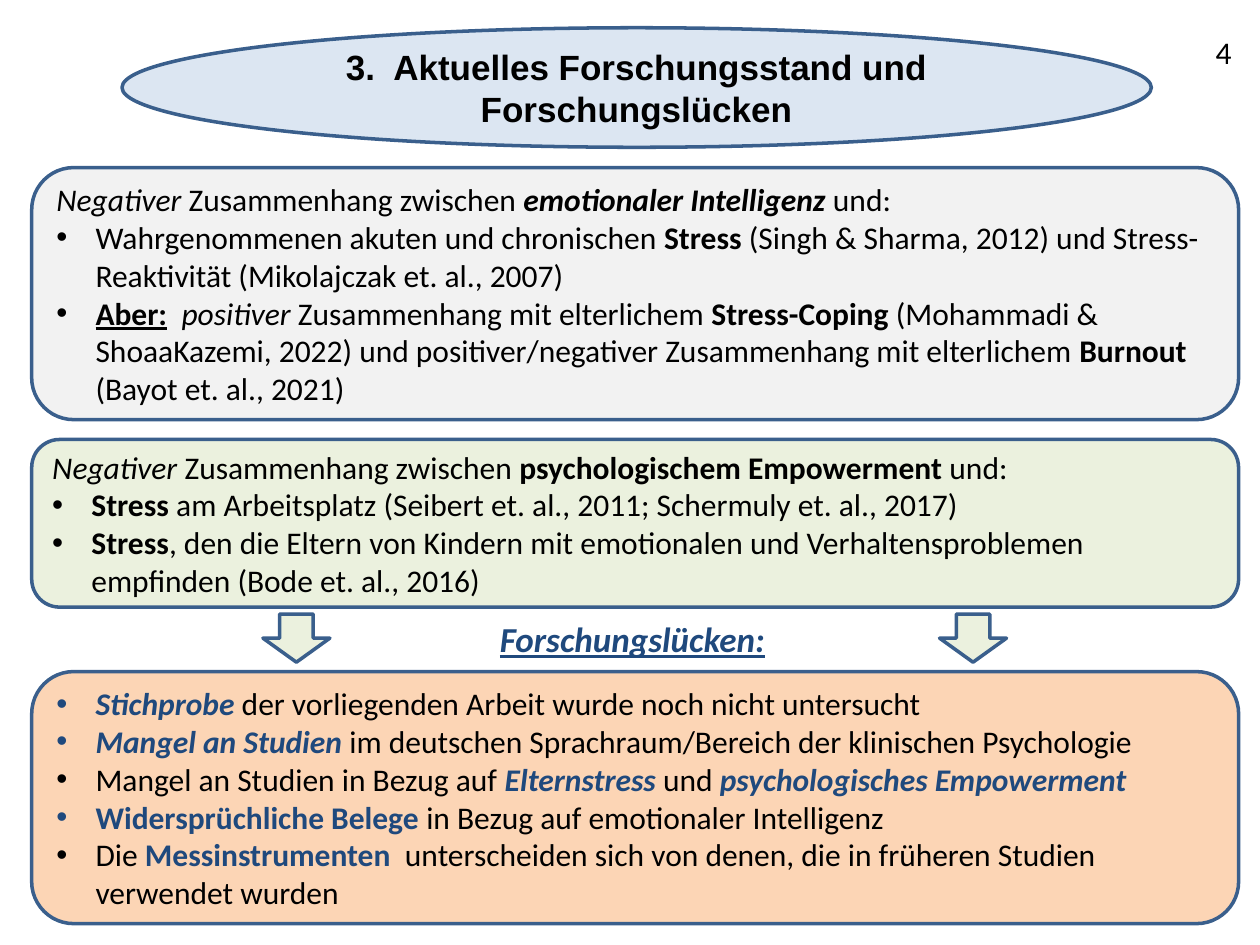
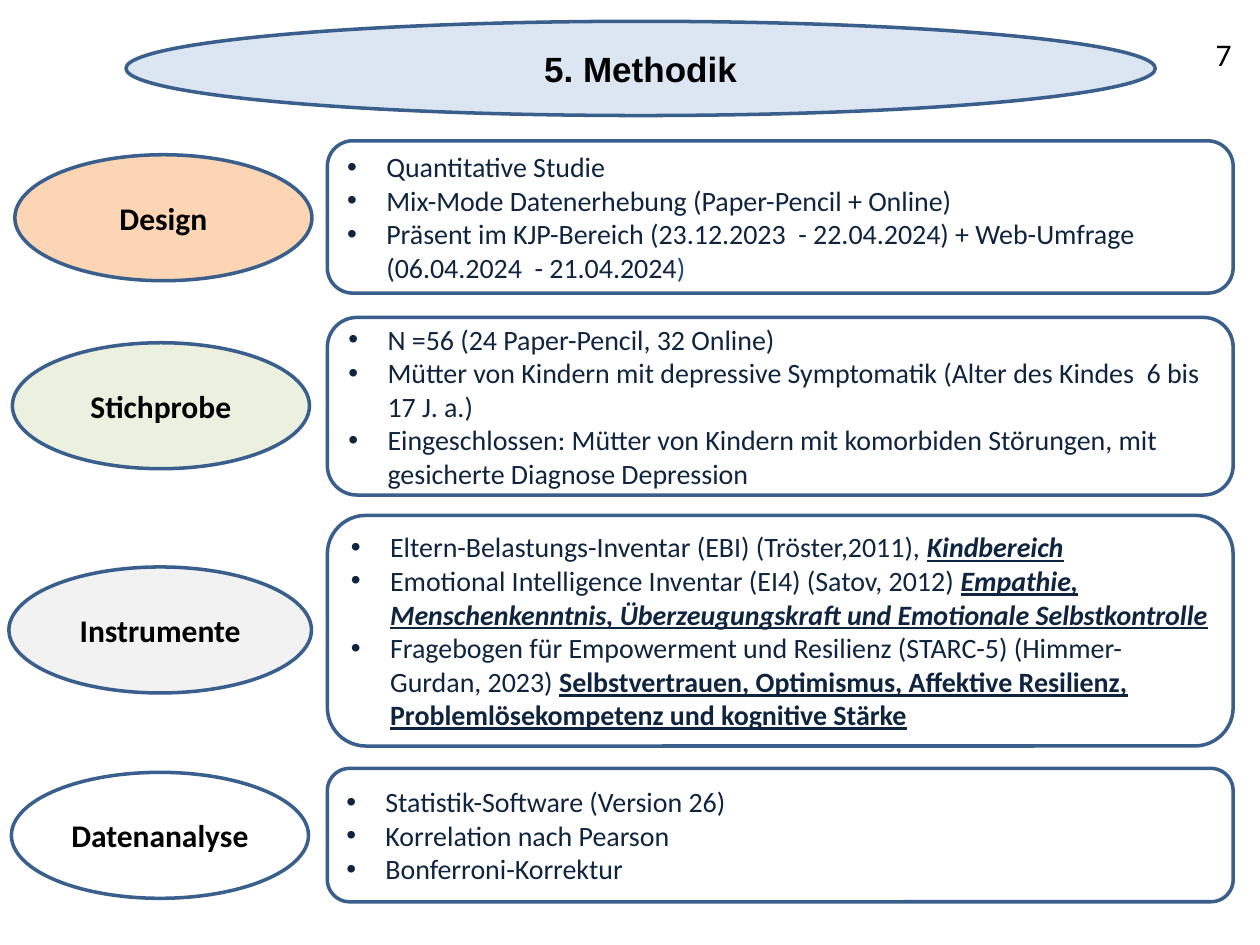
from lxml import etree
from pptx import Presentation
from pptx.dml.color import RGBColor
from pptx.enum.shapes import MSO_SHAPE
from pptx.enum.text import MSO_ANCHOR, PP_ALIGN
from pptx.oxml.ns import qn
from pptx.util import Cm, Pt

ELLIPSE, PANEL, ARROW = MSO_SHAPE.OVAL, MSO_SHAPE.ROUNDED_RECTANGLE, MSO_SHAPE.RIGHT_ARROW
CENTER, LEFT, MIDDLE = PP_ALIGN.CENTER, PP_ALIGN.LEFT, MSO_ANCHOR.MIDDLE

BLACK, NAVY, ACCENT, OUTLINE = "000000", "0F243E", "1F497D", "3A5F8C"
PALE_BLUE, GREY, GREEN, ORANGE, WHITE = "DCE6F2", "F2F2F2", "EBF1DE", "FCD5B5", "FFFFFF"
HEADING_FONT, BODY_FONT = "Arial", "Calibri"
INDENT = Cm(0.79)

# Span marks: b bold, i italic, u underlined, a accent colour
EMOTIONAL_INTRO = [("Negativer ", "i"), ("Zusammenhang zwischen ", ""),
                   ("emotionaler Intelligenz ", "bi"), ("und:", "")]
EMOTIONAL_POINTS = [
    [("Wahrgenommenen akuten und chronischen ", ""), ("Stress", "b"),
     (" (Singh & Sharma, 2012) und Stress-Reaktivität (Mikolajczak et. al., 2007)", "")],
    [("Aber:", "bu"), ("  ", "b"), ("positiver", "i"),
     (" Zusammenhang mit elterlichem ", ""), ("Stress-Coping ", "b"),
     ("(Mohammadi & ShoaaKazemi, 2022) und positiver/negativer Zusammenhang "
      "mit elterlichem ", ""),
     ("Burnout ", "b"), ("(Bayot et. al., 2021)", "")],
]
EMPOWERMENT_INTRO = [("Negativer ", "i"), ("Zusammenhang zwischen ", ""),
                     ("psychologischem Empowerment ", "b"), ("und:", "")]
EMPOWERMENT_POINTS = [
    [("Stress ", "b"),
     ("am Arbeitsplatz (Seibert et. al., 2011; Schermuly et. al., 2017)", "")],
    [("Stress", "b"),
     (", den die Eltern von Kindern mit emotionalen und Verhaltensproblemen "
      "empfinden (Bode et. al., 2016)", "")],
]
GAP_POINTS = [
    [("Stichprobe", "bia"), (" der vorliegenden Arbeit wurde noch nicht untersucht", "")],
    [("Mangel an Studien ", "bia"),
     ("im deutschen Sprachraum/Bereich der klinischen Psychologie", "")],
    [("Mangel an Studien in Bezug auf ", ""), ("Elternstress ", "bia"), ("und", ""),
     (" psychologisches Empowerment", "bia")],
    [("Widersprüchliche Belege ", "ba"), ("in Bezug auf emotionaler Intelligenz", "")],
    [("Die ", ""), ("Messinstrumenten  ", "ba"),
     ("unterscheiden sich von denen, die in früheren Studien verwendet wurden", "")],
]
DESIGN_POINTS = [
    [("Quantitative Studie", "")],
    [("Mix-Mode Datenerhebung (Paper-Pencil + Online)", "")],
    [("Präsent im KJP-Bereich (23.12.2023  - 22.04.2024) + Web-Umfrage "
      "(06.04.2024  - 21.04.2024", ""), (")", "a")],
]
SAMPLE_POINTS = [
    [("N =56 (24 Paper-Pencil, 32 Online)", "")],
    [("Mütter von Kindern mit depressive Symptomatik (Alter des Kindes  6 bis 17 J. a.)", "")],
    [("Eingeschlossen: Mütter von Kindern mit komorbiden Störungen, "
      "mit gesicherte Diagnose Depression", "")],
]
INSTRUMENT_POINTS = [
    [("Eltern-Belastungs-Inventar (EBI) (Tröster,2011), ", ""), ("Kindbereich", "biu")],
    [("Emotional Intelligence Inventar (EI4) (Satov, 2012) ", ""),
     ("Empathie, Menschenkenntnis, Überzeugungskraft und Emotionale Selbstkontrolle", "biu")],
    [("Fragebogen für Empowerment und Resilienz (STARC-5) (Himmer-Gurdan, 2023) ", ""),
     ("Selbstvertrauen, Optimismus, Affektive Resilienz, "
      "Problemlösekompetenz und kognitive Stärke", "bu")],
]
ANALYSIS_POINTS = [
    [("Statistik-Software (Version 26)", "")],
    [("Korrelation nach Pearson", "")],
    [("Bonferroni-Korrektur", "")],
]
METHOD_ROWS = [
    ("Design", ORANGE, (0.3, 3.12, 5.99, 2.54), (2.84, 3.07), DESIGN_POINTS),
    ("Stichprobe", GREEN, (0.25, 6.91, 5.99, 2.54), (6.4, 3.58), SAMPLE_POINTS),
    ("Instrumente", GREY, (0.18, 11.43, 6.1, 2.54), (10.39, 4.65), INSTRUMENT_POINTS),
    ("Datenanalyse", WHITE, (0.23, 15.57, 5.99, 2.54), (15.49, 2.69), ANALYSIS_POINTS),
]


def color(value):
    """Turn a hex string into a colour."""
    return RGBColor.from_string(value)


def add_outlined(slide, kind, area, fill=None):
    """Add an outlined preset shape, hollow when no fill is given."""
    shape = slide.shapes.add_shape(kind, *map(Cm, area))
    shape.shadow.inherit = False
    shape.line.color.rgb = color(OUTLINE)
    shape.line.width = Pt(2)
    if fill:
        shape.fill.solid()
        shape.fill.fore_color.rgb = color(fill)
    else:
        shape.fill.background()
    return shape


def add_spans(para, spans, size, ink=BLACK, font=BODY_FONT):
    """Add marked spans of text to a paragraph."""
    for text, marks in spans:
        span = para.add_run()
        span.text = text
        span.font.name = font
        span.font.size = Pt(size)
        span.font.bold = "b" in marks
        span.font.italic = "i" in marks
        span.font.underline = "u" in marks
        span.font.color.rgb = color(ACCENT if "a" in marks else ink)


def set_bullet(para):
    """Give a paragraph a hanging round bullet."""
    properties = para._p.get_or_add_pPr()
    properties.set("marL", str(INDENT))
    properties.set("indent", str(-INDENT))
    etree.SubElement(properties, qn("a:buFont")).set("typeface", "Arial")
    etree.SubElement(properties, qn("a:buChar")).set("char", "•")


def write_line(box, text, marks, size, font=BODY_FONT):
    """Write one centred line into a shape or text box."""
    frame = box.text_frame
    frame.word_wrap = True
    frame.vertical_anchor = MIDDLE
    para = frame.paragraphs[0]
    para.alignment = CENTER
    add_spans(para, [(text, marks)], size, font=font)


def add_label(slide, text, marks, size, area):
    """Add a centred text box."""
    write_line(slide.shapes.add_textbox(*map(Cm, area)), text, marks, size)


def add_ellipse(slide, text, area, fill, size=18, font=BODY_FONT):
    """Add an ellipse with a bold caption."""
    write_line(add_outlined(slide, ELLIPSE, area, fill), text, "b", size, font)


def add_panel(slide, area, points, size, ink=BLACK, fill=None, intro=None):
    """Add a rounded panel with bullets below an optional intro line."""
    frame = add_outlined(slide, PANEL, area, fill).text_frame
    frame.word_wrap = True
    frame.vertical_anchor = MIDDLE
    lines = ([intro] if intro else []) + points
    for index, spans in enumerate(lines):
        para = frame.add_paragraph() if index else frame.paragraphs[0]
        para.alignment = LEFT
        if spans is not intro:
            set_bullet(para)
        add_spans(para, spans, size, ink)


def add_down_arrow(slide, left):
    """Add a block arrow that points down to the research gaps."""
    add_outlined(slide, ARROW, (left, 12.19, 0.97, 1.35), GREEN).rotation = 90


def start_slide(deck, title, title_area, number, number_top):
    """Add a blank slide with its title ellipse and page number."""
    slide = deck.slides.add_slide(deck.slide_layouts[6])
    add_ellipse(slide, title, title_area, PALE_BLUE, 20, HEADING_FONT)
    add_label(slide, number, "", 18, (23.93, number_top, 1.47, 1.27))
    return slide


def build_research_slide(deck):
    """Build the slide on the state of research and its gaps."""
    slide = start_slide(deck, "3.  Aktuelles Forschungsstand und Forschungslücken",
                        (2.46, 0.56, 20.75, 2.41), "4", 0.41)
    for top, height, fill, intro, points in (
        (3.38, 5.08, GREY, EMOTIONAL_INTRO, EMOTIONAL_POINTS),
        (8.86, 3.38, GREEN, EMPOWERMENT_INTRO, EMPOWERMENT_POINTS),
        (13.54, 5.08, ORANGE, None, GAP_POINTS),
    ):
        add_panel(slide, (0.64, top, 24.33, height), points, 18, fill=fill, intro=intro)
    add_label(slide, "Forschungslücken:", "biua", 20, (7.67, 12.24, 10.16, 1.27))
    for left in (5.49, 19.13):
        add_down_arrow(slide, left)


def build_method_slide(deck):
    """Build the slide on the method, one row per topic."""
    slide = start_slide(deck, "5. Methodik", (2.54, 0.43, 20.75, 1.9), "7", 0.46)
    for topic, fill, topic_area, (top, height), points in METHOD_ROWS:
        add_ellipse(slide, topic, topic_area, fill)
        add_panel(slide, (6.6, top, 18.26, height), points, 16, NAVY)


def main():
    """Build and save the deck."""
    deck = Presentation()
    deck.slide_width, deck.slide_height = Cm(25.4), Cm(19.05)
    build_research_slide(deck)
    build_method_slide(deck)
    deck.save("out.pptx")


if __name__ == "__main__":
    main()
